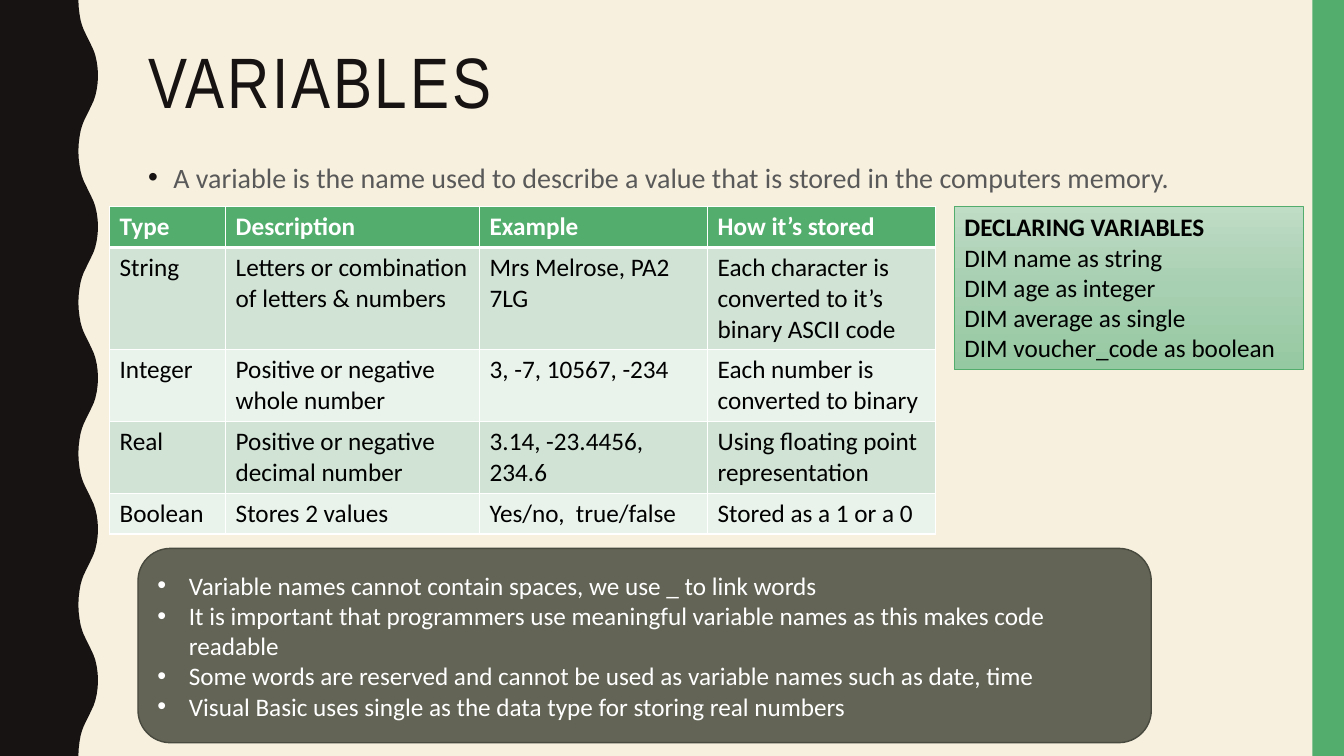
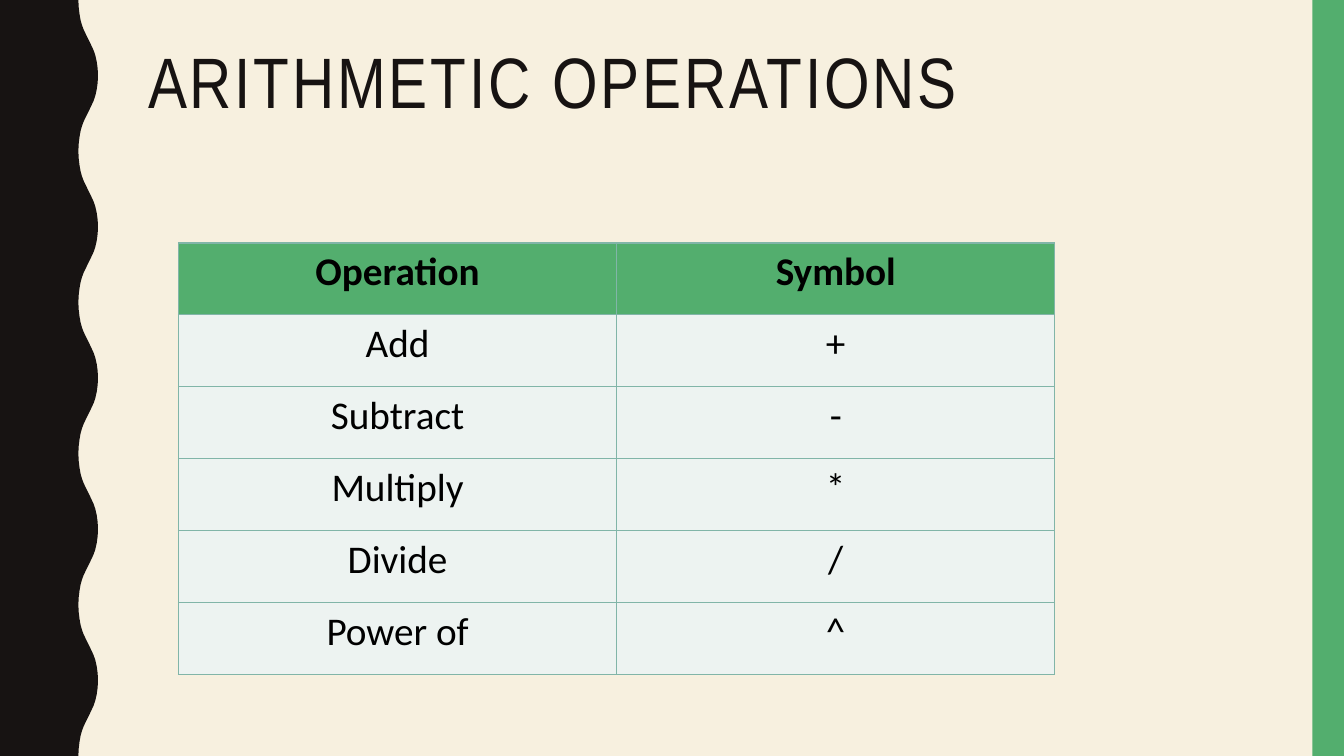
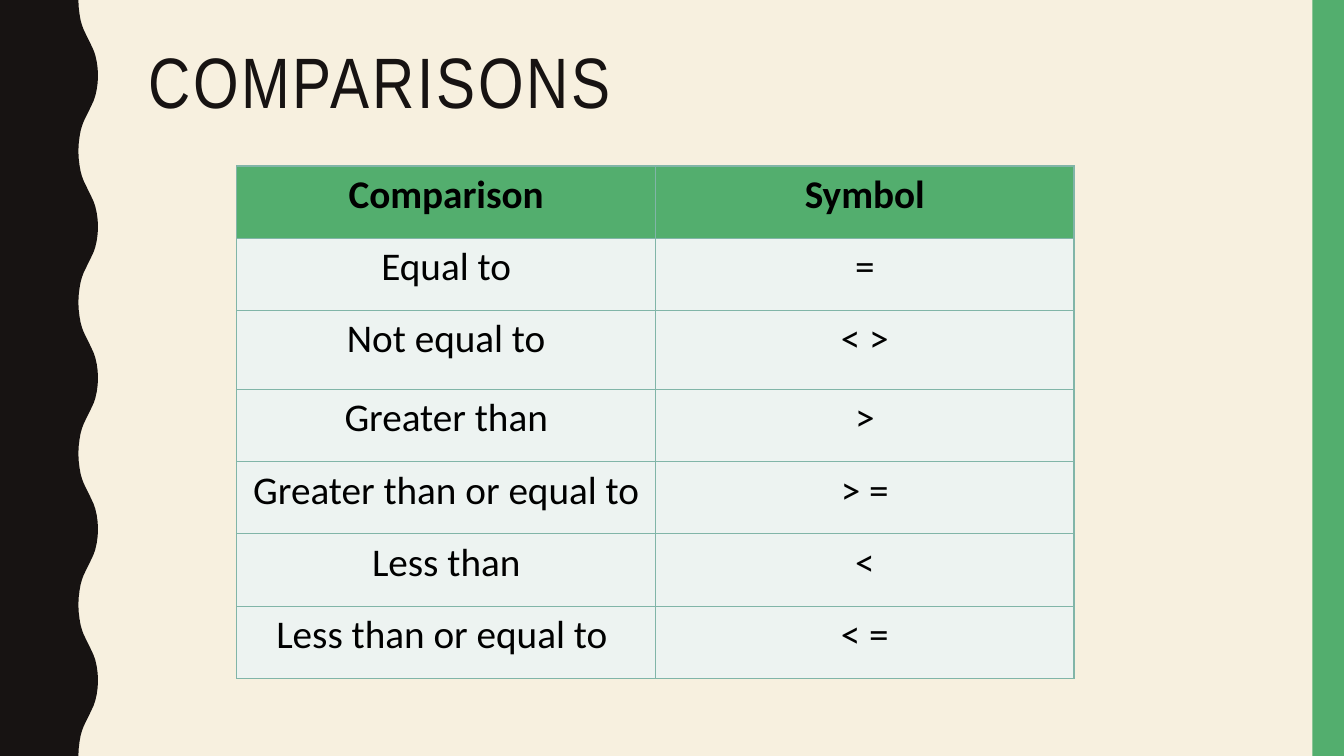
from copy import deepcopy

from lxml import etree
from pptx import Presentation
from pptx.dml.color import RGBColor
from pptx.enum.shapes import MSO_SHAPE
from pptx.enum.text import MSO_ANCHOR, MSO_AUTO_SIZE, PP_ALIGN
from pptx.oxml.ns import qn
from pptx.util import Pt

RECTANGLE, ROUNDED = MSO_SHAPE.RECTANGLE, MSO_SHAPE.ROUNDED_RECTANGLE
TOP, MIDDLE = MSO_ANCHOR.TOP, MSO_ANCHOR.MIDDLE
NO_FIT, GROW = MSO_AUTO_SIZE.NONE, MSO_AUTO_SIZE.SHAPE_TO_FIT_TEXT
LEFT, CENTER = PP_ALIGN.LEFT, PP_ALIGN.CENTER

CREAM = RGBColor(0xF7, 0xF0, 0xDF)
INK = RGBColor(0x17, 0x13, 0x12)
GREEN = RGBColor(0x53, 0xAE, 0x6E)
GREY = RGBColor(0x59, 0x59, 0x59)
WHITE = RGBColor(0xFF, 0xFF, 0xFF)
BLACK = RGBColor(0x00, 0x00, 0x00)
BAND_DARK = RGBColor(0xD1, 0xE3, 0xD5)
BAND_LIGHT = RGBColor(0xE9, 0xF2, 0xEB)
MINT = RGBColor(0xED, 0xF3, 0xF1)
TEAL = RGBColor(0x81, 0xB5, 0xA8)
OLIVE = RGBColor(0x63, 0x64, 0x55)
OLIVE_DARK = RGBColor(0x49, 0x4A, 0x3F)
GRADIENT = [(0, RGBColor(0xBF, 0xDC, 0xC5)), (0.5, RGBColor(0xA7, 0xCF, 0xB1)),
            (1, RGBColor(0x95, 0xC9, 0xA1))]

WIDTH, HEIGHT = 960, 540
TITLE_ONLY, TITLE_AND_BODY = 5, 1
WAVE_PERIOD, WAVE_COUNT = 108, 5
HALF_WAVE = [(56, 0), (56.2, 5), (56.8, 10), (57.6, 14.5), (58.6, 18),
             (59.7, 21), (61.1, 24), (62.6, 27), (64.1, 30), (65.5, 33),
             (66.9, 36), (68.1, 39.5), (69.1, 44), (69.8, 49), (70, 54)]

TITLE_FONT = {"name": "Arial Narrow", "size": Pt(51), "bold": False}
BODY_FONT = {"name": "Calibri", "size": Pt(20), "bold": False}
NOTE_FONT = {"name": "Calibri", "size": Pt(18), "bold": False}
SYMBOL_FONT = {"name": "Calibri", "size": Pt(28), "bold": False}


def set_formats(target, formats):
    for name, value in formats.items():
        setattr(target, name, value)


def add_bullet(para, indent, color=None):
    properties = para._p.get_or_add_pPr()
    properties.set("marL", str(Pt(indent)))
    properties.set("indent", str(-Pt(indent)))
    if color is not None:
        holder = etree.SubElement(properties, qn("a:buClr"))
        etree.SubElement(holder, qn("a:srgbClr"), val=str(color))
    etree.SubElement(properties, qn("a:buFont"), typeface="Arial")
    etree.SubElement(properties, qn("a:buChar"), char="•")


def space_before_percent(para, percent):
    holder = etree.SubElement(para._p.get_or_add_pPr(), qn("a:spcBef"))
    etree.SubElement(holder, qn("a:spcPct"), val=str(percent * 1000))


def set_borders(cell, color, widths):
    """Draw the left, right, top and bottom borders, given their widths."""
    properties = cell._tc.get_or_add_tcPr()
    for index, (side, width) in enumerate(zip("LRTB", widths)):
        line = etree.Element(qn(f"a:ln{side}"), w=str(Pt(width)))
        fill = etree.SubElement(line, qn("a:solidFill"))
        etree.SubElement(fill, qn("a:srgbClr"), val=str(color))
        properties.insert(index, line)


class Lesson:
    """The deck style and the page being drawn."""

    def __init__(self):
        self.deck = Presentation()
        set_formats(self.deck, {"slide_width": Pt(WIDTH), "slide_height": Pt(HEIGHT)})
        background = self.deck.slide_master.background.fill
        background.solid()
        background.fore_color.rgb = CREAM
        self.page = None

    def add_page(self, title, layout=TITLE_ONLY):
        first = self.page is None
        self.page = self.deck.slides.add_slide(self.deck.slide_layouts[layout])
        if first:
            self.decorate_master()
        holder = self.page.shapes.title
        self.place(holder, (98.6, 30.2, 801.4, 117.4))
        para, = self.add_lines(holder.text_frame, [title], TITLE_FONT, INK)
        para.line_spacing = 0.9
        para.runs[0]._r.get_or_add_rPr().set("spc", "200")

    def decorate_master(self):
        """Draw the wave and side band, then move them to the master."""
        mirrored = [(x, WAVE_PERIOD - y) for x, y in reversed(HALF_WAVE[:-1])]
        edge = [(x, y + wave * WAVE_PERIOD) for wave in range(WAVE_COUNT)
                for x, y in HALF_WAVE + mirrored]
        builder = self.page.shapes.build_freeform(0, 0)
        builder.add_line_segments(
            [(Pt(x), Pt(y)) for x, y in edge + [(0, HEIGHT)]], close=True)
        wave = builder.convert_to_shape()
        band = self.add_box(RECTANGLE, (937.5, 0, 22.5, HEIGHT))
        for index, (shape, color) in enumerate([(wave, INK), (band, GREEN)]):
            self.paint(shape, color)
            shape.line.fill.background()
            self.deck.slide_master.shapes.element.insert(index + 2, shape.element)

    def place(self, shape, area):
        names = ("left", "top", "width", "height")
        set_formats(shape, dict(zip(names, map(Pt, area))))

    def paint(self, shape, color):
        shape.shadow.inherit = False
        shape.fill.solid()
        shape.fill.fore_color.rgb = color

    def add_lines(self, frame, lines, font, color, anchor=TOP, fit=NO_FIT):
        set_formats(frame, {"word_wrap": True, "vertical_anchor": anchor,
                            "auto_size": fit})
        for index, line in enumerate(lines):
            para = frame.add_paragraph() if index else frame.paragraphs[0]
            para.alignment = LEFT
            self.add_span(para, line, font, color)
        return frame.paragraphs

    def add_span(self, para, text, font, color):
        span = para.add_run()
        span.text = text
        set_formats(span.font, font)
        span.font.color.rgb = color

    def add_body(self, area, lines):
        body = self.page.placeholders[1]
        self.place(body, area)
        for para in self.add_lines(body.text_frame, lines, BODY_FONT, GREY):
            set_formats(para, {"line_spacing": 1.1, "space_before": Pt(7)})
            add_bullet(para, 18, INK)

    def add_box(self, kind, area):
        return self.page.shapes.add_shape(kind, *map(Pt, area))

    def add_code_box(self, area, heading, lines):
        box = self.add_box(RECTANGLE, area)
        box.shadow.inherit = False
        box.fill.gradient()
        box.fill.gradient_angle = 270
        stops = box.element.spPr.find(".//" + qn("a:gsLst"))
        stops.insert(1, deepcopy(stops[0]))
        for stop, (position, color) in zip(box.fill.gradient_stops, GRADIENT):
            stop.position = position
            stop.color.rgb = color
        box.line.color.rgb = GREEN
        box.line.width = Pt(0.5)
        paras = self.add_lines(box.text_frame, [heading] + lines, NOTE_FONT, BLACK,
                               fit=GROW)
        paras[0].runs[0].font.bold = True

    def add_note_box(self, area, lines):
        box = self.add_box(ROUNDED, area)
        self.paint(box, OLIVE)
        box.line.color.rgb = OLIVE_DARK
        box.line.width = Pt(1)
        for para in self.add_lines(box.text_frame, lines, NOTE_FONT, WHITE, MIDDLE):
            add_bullet(para, 22.5)

    def add_grid(self, corner, widths, heights, rows):
        """Add an empty table and yield row number, cell and text."""
        area = (*corner, sum(widths), sum(heights))
        table = self.page.shapes.add_table(
            len(rows), len(widths), *map(Pt, area)).table
        for column, width in zip(table.columns, widths):
            column.width = Pt(width)
        for row, height in zip(table.rows, heights):
            row.height = Pt(height)
        for number, texts in enumerate(rows):
            for column, text in enumerate(texts):
                yield number, table.cell(number, column), text

    def fill_cell(self, cell, text, font, color, fill):
        cell.fill.solid()
        cell.fill.fore_color.rgb = fill
        para = cell.text_frame.paragraphs[0]
        self.add_span(para, text, font, color)
        return para

    def add_type_table(self, corner, widths, heights, rows):
        for number, cell, text in self.add_grid(corner, widths, heights, rows):
            header = number == 0
            fill = GREEN if header else BAND_DARK if number % 2 else BAND_LIGHT
            self.fill_cell(cell, text, {**NOTE_FONT, "bold": header},
                           WHITE if header else BLACK, fill)
            set_borders(cell, WHITE, (1, 1, 3 if number == 1 else 1, 3 if header else 1))

    def add_symbol_table(self, corner, column_width, heights, rows):
        widths = [column_width] * 2
        for number, cell, text in self.add_grid(corner, widths, heights, rows):
            header = number == 0
            para = self.fill_cell(cell, text, {**SYMBOL_FONT, "bold": header},
                                  BLACK, GREEN if header else MINT)
            para.alignment = CENTER
            space_before_percent(para, 20)
            set_borders(cell, TEAL, (1, 1, 1, 1))


def main():
    lesson = Lesson()

    lesson.add_page("VARIABLES", TITLE_AND_BODY)
    lesson.add_body((98.6, 108.7, 768.2, 38.9), [
        "A variable is the name used to describe a value that is stored "
        "in the computers memory."])
    lesson.add_type_table(
        (78.3, 147.6), [82.9, 181.4, 162.9, 162.9], [29.2, 73.1, 51.1, 51.1, 29.2], [
            ("Type", "Description", "Example", "How it’s stored"),
            ("String", "Letters or combination of letters & numbers",
             "Mrs Melrose, PA2 7LG",
             "Each character is converted to it’s binary ASCII code"),
            ("Integer", "Positive or negative whole number",
             "3, -7, 10567, -234", "Each number is converted to binary"),
            ("Real", "Positive or negative decimal number",
             "3.14, -23.4456, 234.6", "Using floating point representation"),
            ("Boolean", "Stores 2 values", "Yes/no,  true/false",
             "Stored as a 1 or a 0")])
    lesson.add_code_box((681.8, 147.6, 249.2, 116.6), "DECLARING VARIABLES", [
        "DIM name as string",
        "DIM age as integer",
        "DIM average as single",
        "DIM voucher_code as boolean"])
    lesson.add_note_box((98.6, 391.7, 723.8, 138.8), [
        "Variable names cannot contain spaces, we use _ to link words",
        "It is important that programmers use meaningful variable names "
        "as this makes code readable",
        "Some words are reserved and cannot be used as variable names "
        "such as date, time",
        "Visual Basic uses single as the data type for storing real numbers"])

    lesson.add_page("ARITHMETIC OPERATIONS")
    lesson.add_symbol_table((127.5, 173.5), 313, [51.4] * 6, [
        ("Operation", "Symbol"),
        ("Add", "+"),
        ("Subtract", "-"),
        ("Multiply", "*"),
        ("Divide", "/"),
        ("Power of", "^")])

    lesson.add_page("COMPARISONS")
    lesson.add_symbol_table(
        (169.2, 118.6), 299, [51.6, 51.6, 56.4] + [51.6] * 4, [
            ("Comparison", "Symbol"),
            ("Equal to", "="),
            ("Not equal to", "< >"),
            ("Greater than", ">"),
            ("Greater than or equal to", "> ="),
            ("Less than", "<"),
            ("Less than or equal to ", "< =")])

    lesson.deck.save("out.pptx")


if __name__ == "__main__":
    main()
